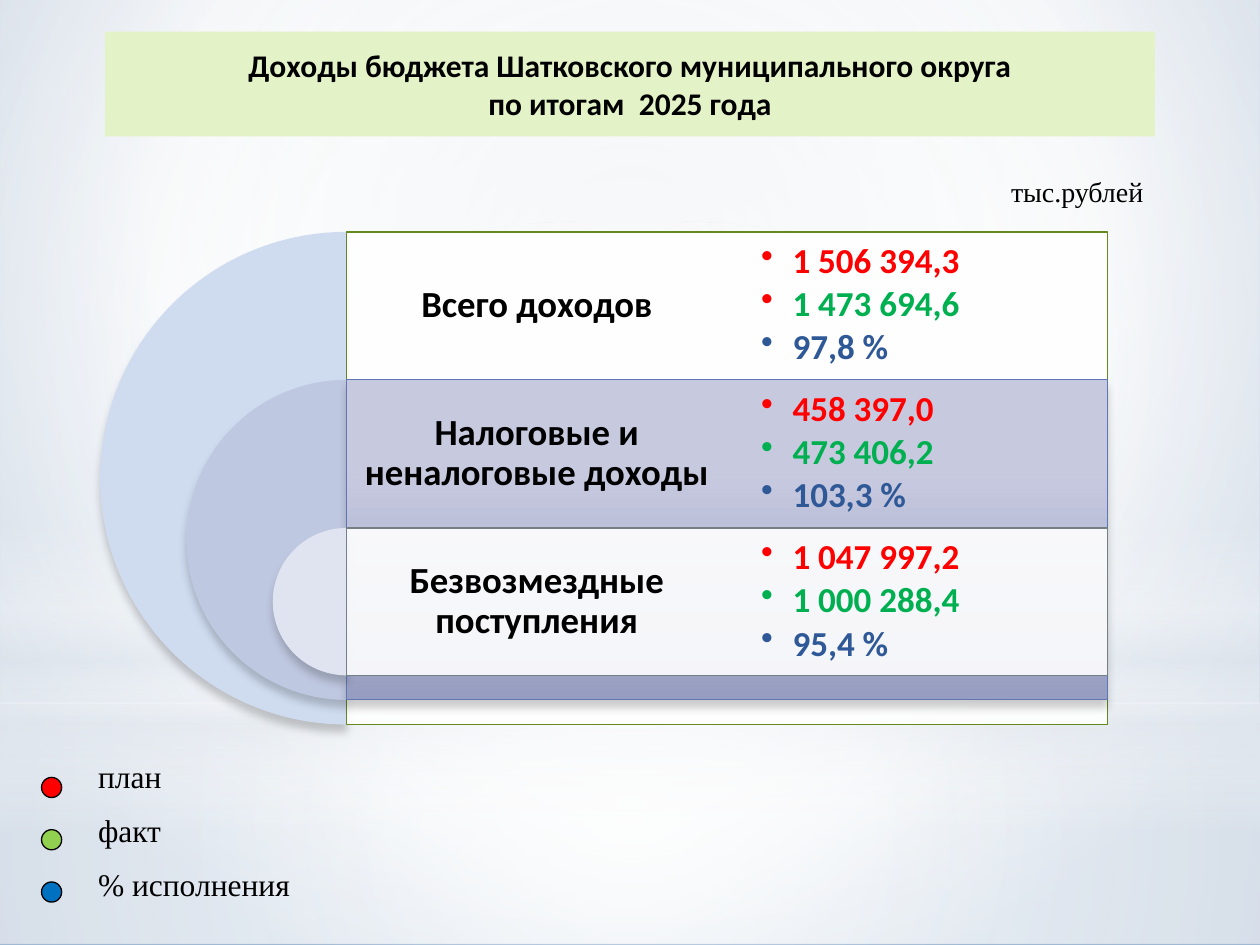
import pptx
import pptx.util
import pptx.dml.color
import pptx.enum.shapes
import pptx.enum.text
import pptx.oxml
import pptx.oxml.ns

Inches, Pt = pptx.util.Inches, pptx.util.Pt
SHAPE = pptx.enum.shapes.MSO_SHAPE
ALIGN = pptx.enum.text.PP_ALIGN
ANCHOR = pptx.enum.text.MSO_ANCHOR
NS = pptx.oxml.ns.nsdecls("a")
qn = pptx.oxml.ns.qn

WIDTH, HEIGHT = 10, 7.5
TITLE = ["Доходы бюджета Шатковского муниципального округа", "по итогам  2025 года"]
UNIT = "тыс.рублей"
RED, GREEN, BLUE = "FF0000", "00B050", "2F5897"
INCOME = [
    {"label": "Всего доходов", "values": ["1 506 394,3", "1 473 694,6", "97,8 %"],
     "bullets": [RED, RED, BLUE], "pie": "CFDCF0", "border": "63891F",
     "band": [(0, "FFFFFF", 90)], "raised": False},
    {"label": "Налоговые и неналоговые доходы", "values": ["458 397,0", "473 406,2", "103,3 %"],
     "bullets": [RED, GREEN, BLUE], "pie": "BFC8E1", "border": "6076B4",
     "band": [(28, "C7CADF", 100), (100, "969DC0", 100)], "raised": True},
    {"label": "Безвозмездные поступления", "values": ["1 047 997,2", "1 000 288,4", "95,4 %"],
     "bullets": [RED, GREEN, BLUE], "pie": "DFE4F0", "border": "758085",
     "band": [(0, "FFFFFF", 90)], "raised": False},
]
LEGEND = [("план", "FF0000"), ("факт", "92D050"), ("% исполнения", "0070C0")]

SKY = [(0, "D7DFE7", 100), (60, "FFFFFF", 100), (100, "A2B9D3", 100)]
CENTRE = (50, 50, 50, 50)
HAZE = [
    (SHAPE.RECTANGLE, 5.58, 1.91, [(0, "FFFFFF", 91), (37, "FFFFFF", 76), (100, "E4E9EF", 79)], CENTRE),
    (SHAPE.RECTANGLE, 0, 5.58, [(0, "FFFFFF", 89), (48, "FFFFFF", 62), (100, "E4E9EF", 79)], CENTRE),
    (SHAPE.RECTANGLE, 4.12, 2.49, [(0, "FFFFFF", 0), (29, "FFFFFF", 30), (45, "E4E9EF", 40),
                                   (55, "FFFFFF", 26), (65, "E4E9EF", 60), (100, "FFFFFF", 0)], None),
    (SHAPE.OVAL, 1.75, 5.58, [(0, "FFFFFF", 100), (56, "FFFFFF", 0)], CENTRE),
]

AXIS, TOP, ROW, RING, BAND = 2.75, 1.84, 1.175, 1.37, 6.04
OUTER, INNER = 3.91, 1.17
MARGINS = (0.1, 0.05, 0.1, 0.05)
HEADING = {"size": Pt(18), "name": "Calibri", "bold": True}
LABEL = {"size": Pt(21), "name": "Calibri", "bold": True}
VALUE = {"size": Pt(20), "name": "Calibri", "bold": True}
NOTE = {"size": Pt(18), "name": "Times New Roman", "bold": False}
UNIT_FONT = {**NOTE, "size": Pt(16)}


def color(value):
    return pptx.dml.color.RGBColor.from_string(value)


def blend(holder, stops, focus=None):
    tints = [f'<a:srgbClr val="{c}"><a:alpha val="{a * 1000}"/></a:srgbClr>' for _, c, a in stops]
    if len(stops) == 1:
        markup = f"<a:solidFill {NS}>{tints[0]}</a:solidFill>"
    else:
        marks = "".join(f'<a:gs pos="{s[0] * 1000}">{t}</a:gs>' for s, t in zip(stops, tints))
        course = '<a:lin ang="5400000" scaled="0"/>'
        if focus:
            sides = " ".join(f'{side}="{share * 1000}"' for side, share in zip("ltrb", focus))
            course = f'<a:path path="circle"><a:fillToRect {sides}/></a:path>'
        markup = f'<a:gradFill {NS} rotWithShape="1"><a:gsLst>{marks}</a:gsLst>{course}</a:gradFill>'
    holder.replace(holder.find(qn("a:noFill")), pptx.oxml.parse_xml(markup))


def add_figure(slide, kind, box, fill=None, border=None, raised=False):
    figure = slide.shapes.add_shape(kind, *map(Inches, box))
    figure.shadow.inherit = False
    figure.fill.background()
    if fill:
        figure.fill.solid()
        figure.fill.fore_color.rgb = color(fill)
    if border:
        figure.line.color.rgb = color(border)
        figure.line.width = Pt(0.75)
    else:
        figure.line.fill.background()
    if raised:
        figure._element.spPr.find(qn("a:effectLst")).append(pptx.oxml.parse_xml(
            f'<a:outerShdw {NS} blurRad="{Pt(5)}" dist="{Pt(4)}" dir="5400000" rotWithShape="0">'
            '<a:srgbClr val="000000"><a:alpha val="20000"/></a:srgbClr></a:outerShdw>'))
    return figure


def write(owner, lines, font, margins=MARGINS, anchor=ANCHOR.TOP, colors=None, bullets=None, **layout):
    frame = owner.text_frame
    frame.word_wrap = True
    frame.vertical_anchor = anchor
    for side, margin in zip(("left", "top", "right", "bottom"), margins):
        setattr(frame, f"margin_{side}", Inches(margin))
    for i, line in enumerate(lines):
        paragraph = frame.add_paragraph() if i else frame.paragraphs[0]
        if bullets:
            properties = paragraph._p.get_or_add_pPr()
            properties.set("marL", str(Inches(0.25)))
            properties.set("indent", str(-Inches(0.25)))
            for markup in (f'<a:buClr {NS}><a:srgbClr val="{bullets[i]}"/></a:buClr>',
                           f'<a:buChar {NS} char="•"/>'):
                properties.append(pptx.oxml.parse_xml(markup))
        for key, value in layout.items():
            setattr(paragraph, key, value)
        run = paragraph.add_run()
        run.text = line
        for key, value in font.items():
            setattr(run.font, key, value)
        run.font.color.rgb = color(colors[i] if colors else "000000")


def add_text(slide, box, *args, **kwargs):
    write(slide.shapes.add_textbox(*map(Inches, box)), *args, **kwargs)


def add_backdrop(slide):
    slide.background.fill.background()
    blend(slide._element.cSld.bg.bgPr, SKY, (50, 25, 50, 75))
    for kind, top, height, stops, focus in HAZE:
        haze = add_figure(slide, kind, (0, top, WIDTH, height))
        blend(haze._element.spPr, stops, focus)


def add_title(slide):
    title = slide.shapes.title
    slide.shapes._spTree.append(title._element)
    title.left, title.top = Inches(WIDTH / 12), Inches(HEIGHT / 30)
    title.width, title.height = Inches(WIDTH * 10 / 12), Inches(HEIGHT / 9)
    title._element.spPr.append(pptx.oxml.parse_xml(
        f'<a:prstGeom {NS} prst="roundRect"><a:avLst/></a:prstGeom>'))
    title.fill.solid()
    title.fill.fore_color.rgb = color("E3F2C7")
    write(title, TITLE, HEADING, anchor=ANCHOR.MIDDLE, alignment=ALIGN.CENTER)


def add_income(slide):
    for i, item in enumerate(INCOME):
        top, size = TOP + i * ROW, OUTER - i * RING
        pie = add_figure(slide, SHAPE.PIE, (AXIS - size / 2, top, size, size), item["pie"], raised=True)
        pie.adjustments[0], pie.adjustments[1] = 54, 162
        band = add_figure(slide, SHAPE.RECTANGLE, (AXIS, top, BAND, size),
                          border=item["border"], raised=item["raised"])
        blend(band._element.spPr, item["band"])
        write(band, [item["label"]], LABEL, (0.09, 0.09, BAND / 2 + 0.09, size - INNER + 0.09),
              ANCHOR.MIDDLE, alignment=ALIGN.CENTER, line_spacing=0.9)
    for i, item in enumerate(INCOME):
        add_text(slide, (AXIS + BAND / 2, TOP + i * ROW, BAND / 2, INNER), item["values"], VALUE,
                 (0.27,) * 4, ANCHOR.MIDDLE, (RED, GREEN, BLUE), item["bullets"],
                 level=1, line_spacing=0.9, space_after=Pt(3))


def add_legend(slide):
    for i, (name, fill) in enumerate(LEGEND):
        add_figure(slide, SHAPE.OVAL, (0.33, 6.17 + i * 0.415, 0.16, 0.16), fill, "000000")
        add_text(slide, (0.68, 5.96 + i * 0.43, 1.87, 0.4), [name], NOTE)


def main():
    deck = pptx.Presentation()
    deck.slide_width, deck.slide_height = Inches(WIDTH), Inches(HEIGHT)
    slide = deck.slides.add_slide(deck.slide_layouts[5])
    add_backdrop(slide)
    add_title(slide)
    add_income(slide)
    unit = add_figure(slide, SHAPE.ROUNDED_RECTANGLE, (7.91, 1.32, 1.41, 0.33))
    write(unit, [UNIT], UNIT_FONT, alignment=ALIGN.LEFT)
    add_legend(slide)
    deck.save("out.pptx")


if __name__ == "__main__":
    main()
